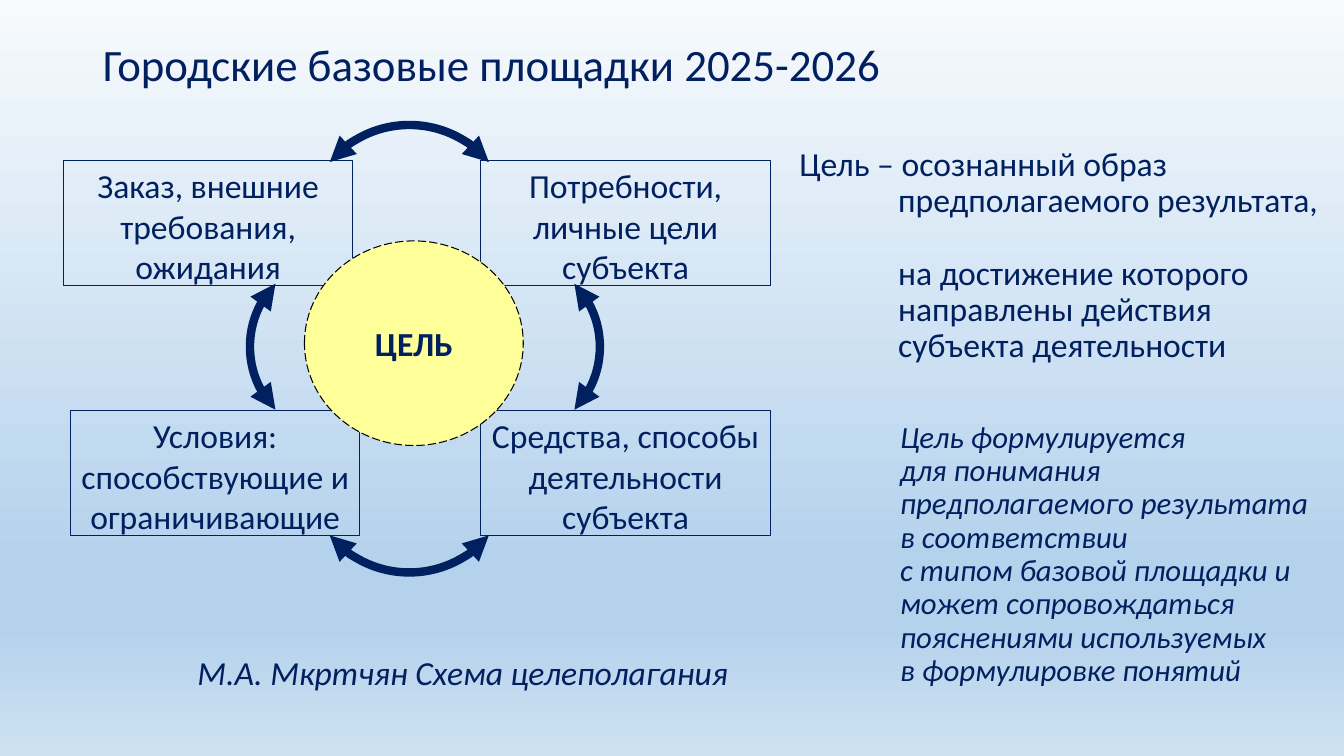
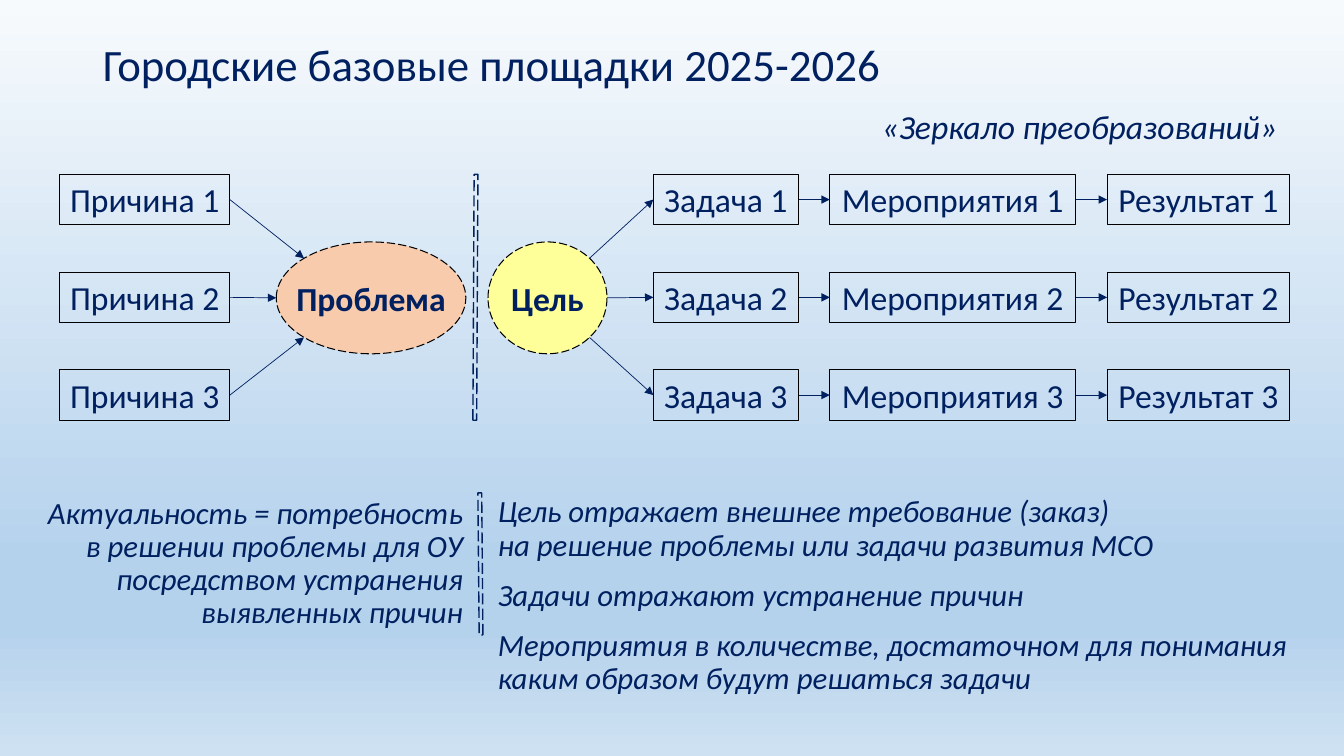
import math

import pptx
import pptx.dml.color
import pptx.enum.dml
import pptx.enum.shapes
import pptx.enum.text
import pptx.oxml.ns
import pptx.util
from lxml import etree

Inches, Pt = pptx.util.Inches, pptx.util.Pt
RGBColor = pptx.dml.color.RGBColor
SHAPE = pptx.enum.shapes.MSO_SHAPE
ALIGN = pptx.enum.text.PP_ALIGN
ANCHOR = pptx.enum.text.MSO_ANCHOR
qn = pptx.oxml.ns.qn

NAVY = RGBColor(0x00, 0x20, 0x60)
BLACK = RGBColor(0x00, 0x00, 0x00)
YELLOW = RGBColor(0xFF, 0xFF, 0x99)
PEACH = RGBColor(0xF8, 0xCB, 0xAD)
BACKGROUND = [(0, RGBColor(0xF7, 0xFA, 0xFD)), (74, RGBColor(0xB5, 0xD2, 0xEC)),
              (83, RGBColor(0xB5, 0xD2, 0xEC)), (100, RGBColor(0xCE, 0xE1, 0xF2))]
FONT = "Calibri"
TITLE = "Городские базовые площадки 2025-2026"

# Slide 1: boxes are (left, top, text), arcs are (centre x, centre y, radius, middle angle, half angle)
FACTOR_SIZE = (2.87, 1.24)
FACTORS = [
    (0.63, 1.59, "Заказ, внешние требования, ожидания"),
    (4.77, 1.59, "Потребности,\nличные цели\nсубъекта"),
    (4.77, 4.07, "Средства, способы деятельности субъекта"),
    (0.7, 4.07, "Условия: способствующие и ограничивающие"),
]
ARCS = [
    (4.06, 2.27, 1.03, 270, 50),
    (4.06, 4.65, 1.03, 90, 50),
    (3.38, 3.44, 0.9, 180, 44),
    (5.05, 3.44, 0.9, 0, 44),
]
AUTHOR = "М.А. Мкртчян Схема целеполагания"
DEFINITION = [
    "Цель – осознанный образ\nпредполагаемого результата,",
    "на достижение которого\nнаправлены действия\nсубъекта деятельности",
]
HANGING = Inches(0.98)
EXPLANATION = ("Цель формулируется\nдля понимания\nпредполагаемого результата\n"
               "в соответствии\nс типом базовой площадки и\nможет сопровождаться\n"
               "пояснениями используемых\nв формулировке понятий")

# Slide 2: columns are (left, width, word)
CAUSES = (0.59, 1.69, "Причина")
STEPS = [(6.48, 1.44, "Задача"), (8.23, 2.44, "Мероприятия"), (10.98, 1.81, "Результат")]
ROW_TOP, ROW_STEP, ROW_HEIGHT, ROWS = 1.73, 0.97, 0.5, 3
PROBLEM_BOX = (2.74, 2.4, 1.88, 1.11)
GOAL_BOX = (4.84, 2.4, 1.18, 1.11)
MIRRORS = [((4.69, 1.73, 0.05, 2.44), False), ((4.74, 4.89, 0.05, 1.41), True)]
MIRROR_NAME = "«Зеркало преобразований»"
RELEVANCE = ("Актуальность = потребность в решении проблемы для ОУ "
             "посредством устранения выявленных причин")
NOTES = [
    "Цель отражает внешнее требование (заказ)\nна решение проблемы или задачи развития МСО",
    "Задачи отражают устранение причин",
    "Мероприятия в количестве, достаточном для понимания каким образом будут решаться задачи",
]


def set_background(master):
    fill = master.background.fill
    fill.gradient()
    fill.gradient_angle = 270
    stops = master.element.find(".//" + qn("a:gsLst"))
    for old in list(stops):
        stops.remove(old)
    for percent, color in BACKGROUND:
        stop = etree.SubElement(stops, qn("a:gs"), pos=str(percent * 1000))
        etree.SubElement(stop, qn("a:srgbClr"), val=str(color))


def place(sp, box):
    sp.left, sp.top, sp.width, sp.height = map(Inches, box)


def write(p, text, size=24, align=ALIGN.LEFT, bold=False, italic=False, spacing=None):
    p.text = text
    p.alignment = align
    p.line_spacing = spacing
    font = p.font
    font.name, font.size, font.bold, font.italic = FONT, Pt(size), bold, italic
    font.color.rgb = NAVY


def add_slide(prs):
    s = prs.slides.add_slide(prs.slide_layouts[5])
    title = s.shapes.title
    place(title, (0.92, 0.4, 11.5, 0.52))
    tf = title.text_frame
    tf.auto_size = pptx.enum.text.MSO_AUTO_SIZE.NONE
    tf.vertical_anchor = ANCHOR.MIDDLE
    write(tf.paragraphs[0], TITLE, 32, spacing=0.9)
    return s


def add_text(s, box, texts, gap=0, **style):
    """Add a text box with one paragraph per text, gap points apart."""
    tf = s.shapes.add_textbox(*map(Inches, box)).text_frame
    tf.word_wrap = True
    tf.vertical_anchor = ANCHOR.MIDDLE
    for i, text in enumerate(texts):
        p = tf.add_paragraph() if i else tf.paragraphs[0]
        write(p, text, spacing=0.9, **style)
        if i:
            p.space_before = Pt(gap)
    return tf


def add_shape(s, kind, box, line, width, fill=None, dashed=False):
    sp = s.shapes.add_shape(kind, *map(Inches, box))
    sp.shadow.inherit = False
    if fill is None:
        sp.fill.background()
    else:
        sp.fill.solid()
        sp.fill.fore_color.rgb = fill
    sp.line.color.rgb = line
    sp.line.width = Pt(width)
    if dashed:
        sp.line.dash_style = pptx.enum.dml.MSO_LINE.LONG_DASH
    return sp


def add_box(s, box, text, line):
    sp = add_shape(s, SHAPE.RECTANGLE, box, line, 0.75)
    sp.text_frame.vertical_anchor = ANCHOR.TOP
    write(sp.text_frame.paragraphs[0], text, align=ALIGN.CENTER)
    return sp


def add_oval(s, box, text, fill):
    sp = add_shape(s, SHAPE.OVAL, box, BLACK, 0.75, fill, dashed=True)
    tf = sp.text_frame
    tf.word_wrap = False
    tf.vertical_anchor = ANCHOR.MIDDLE
    write(tf.paragraphs[0], text, align=ALIGN.CENTER, bold=True)
    return sp


def add_arrowheads(sp, *ends):
    ln = sp.element.spPr.find(qn("a:ln"))
    for end in ends:
        etree.SubElement(ln, qn("a:" + end), type="triangle")


def add_arc(s, x, y, radius, middle, half):
    sp = add_shape(s, SHAPE.ARC, (x - radius, y - radius, 2 * radius, 2 * radius), NAVY, 6)
    for i, angle in enumerate((middle - half, middle + half)):
        sp.adjustments[i] = angle % 360 * 0.6  # 60000 units a degree, in 100000ths
    add_arrowheads(sp, "headEnd", "tailEnd")


def add_arrow(s, start, end):
    """Draw an arrow; each end is an (x, y) point or a (shape, site) pair."""
    c = s.shapes.add_connector(pptx.enum.shapes.MSO_CONNECTOR.STRAIGHT, 0, 0, 0, 0)
    if isinstance(start[0], float):
        c.begin_x, c.begin_y = map(Inches, start)
    else:
        c.begin_connect(*start)
    if isinstance(end[0], float):
        c.end_x, c.end_y = map(Inches, end)
    else:
        c.end_connect(*end)
    c.line.color.rgb = NAVY
    c.line.width = Pt(0.5)
    add_arrowheads(c, "tailEnd")
    etree.SubElement(c.element.spPr, qn("a:effectLst"))


def oval_point(box, degrees):
    left, top, width, height = box
    angle = math.radians(degrees)
    return (left + width / 2 * (1 + math.cos(angle)), top + height / 2 * (1 + math.sin(angle)))


def add_column(s, left, width, word):
    return [add_box(s, (left, ROW_TOP + ROW_STEP * i, width, ROW_HEIGHT), f"{word} {i + 1}", BLACK)
            for i in range(ROWS)]


def build_goal_setting(prs):
    s = add_slide(prs)
    for left, top, text in FACTORS:
        add_box(s, (left, top, *FACTOR_SIZE), text, NAVY)
    add_oval(s, (3.02, 2.39, 2.17, 2.03), "ЦЕЛЬ", YELLOW)
    for arc in ARCS:
        add_arc(s, *arc)
    add_text(s, (1.86, 6.43, 5.53, 0.52), [AUTHOR], italic=True)
    tf = add_text(s, (7.83, 1.51, 5.37, 2.06), DEFINITION, gap=26)
    for p, indent in zip(tf.paragraphs, (-HANGING, 0)):
        pPr = p._p.get_or_add_pPr()
        pPr.set("marL", str(HANGING))
        pPr.set("indent", str(indent))
    add_text(s, (8.83, 4.11, 4.33, 2.79), [EXPLANATION], size=22, italic=True)


def build_mirror(prs):
    s = add_slide(prs)
    add_text(s, (8.43, 1.02, 4.34, 0.52), [MIRROR_NAME], align=ALIGN.RIGHT, italic=True)
    add_oval(s, PROBLEM_BOX, "Проблема", PEACH)
    add_oval(s, GOAL_BOX, "Цель", YELLOW)
    causes = add_column(s, *CAUSES)
    steps = [add_column(s, *column) for column in STEPS]
    for cause, task, degrees in zip(causes, steps[0], (-45, 0, 45)):
        add_arrow(s, (cause, 3), oval_point(PROBLEM_BOX, 180 - degrees))
        add_arrow(s, oval_point(GOAL_BOX, degrees), (task, 1))
    for before, after in zip(steps, steps[1:]):
        for source, target in zip(before, after):
            add_arrow(s, (source, 3), (target, 1))
    for box, flipped in MIRRORS:
        sp = add_shape(s, SHAPE.PARALLELOGRAM, box, NAVY, 1, dashed=True)
        if flipped:
            sp.element.spPr.xfrm.set("flipH", "1")
    add_text(s, (0.33, 4.89, 4.36, 1.41), [RELEVANCE], size=22, align=ALIGN.RIGHT, italic=True)
    add_text(s, (4.84, 4.92, 8.28, 1.99), NOTES, gap=12, size=22, italic=True)


def main():
    prs = pptx.Presentation()
    prs.slide_width, prs.slide_height = Inches(13.33), Inches(7.5)
    set_background(prs.slide_master)
    build_goal_setting(prs)
    build_mirror(prs)
    prs.save("out.pptx")


if __name__ == "__main__":
    main()
